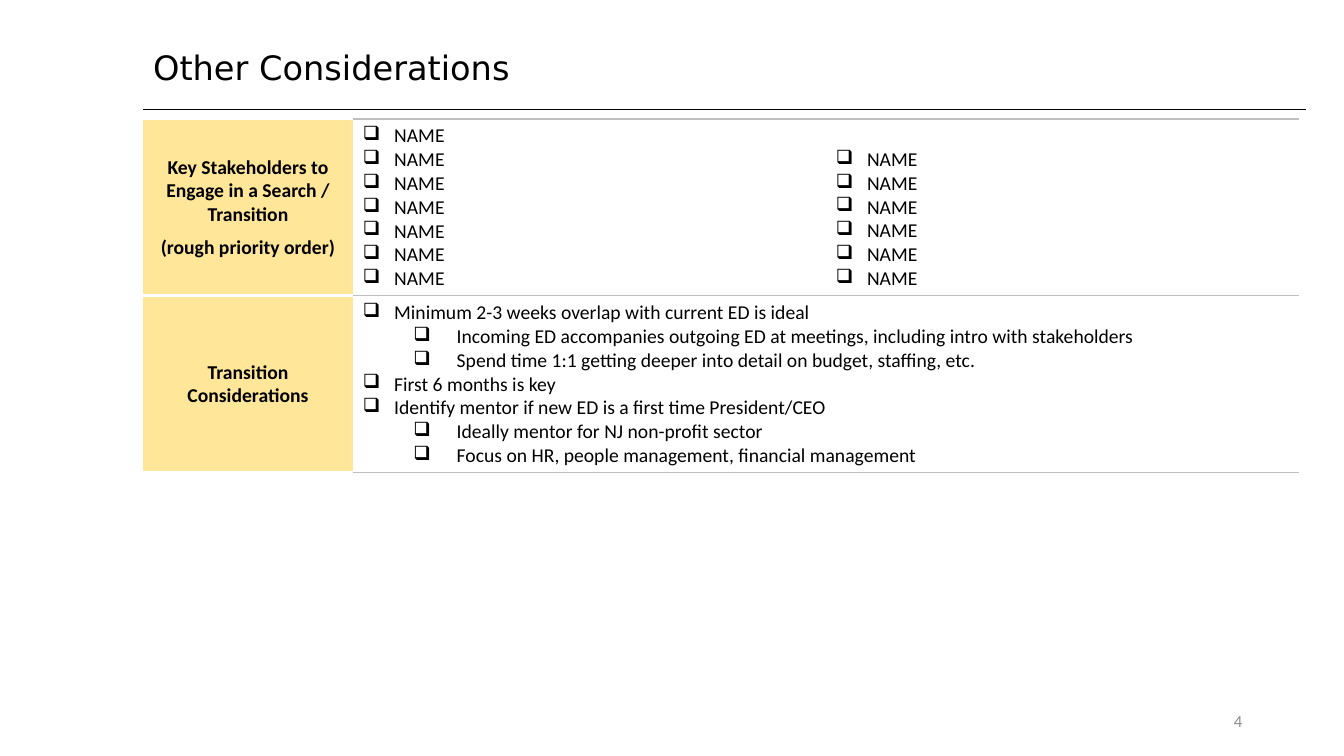
from lxml import etree
from pptx import Presentation
from pptx.dml.color import RGBColor
from pptx.enum import shapes, text
from pptx.oxml import ns
from pptx.util import Inches, Pt

HEX = {"ink": "000000", "gold": "FFE699", "rule": "BFBFBF",
       "gap": "FFFFFF", "page": "8C8C8C"}
PLAIN = "{2D5ABB26-0587-4C30-8999-92F81FD0307C}"
INDENT = [(0.31, -0.31), (0.93, -0.43)]
MID = text.MSO_ANCHOR.MIDDLE
LOW = text.MSO_ANCHOR.BOTTOM


def write(frame, lines, form, size=14, face="Calibri", ink="ink", bold=False):
    """Fill a text frame with one paragraph per line, formatted from form."""
    frame.word_wrap = True
    for i, line in enumerate(lines):
        para = frame.paragraphs[0] if i == 0 else frame.add_paragraph()
        for key, val in form.items():
            setattr(para, key, val)
        font = para.add_run().font
        para.runs[0].text = line
        for key, val in {"size": Pt(size), "name": face, "bold": bold}.items():
            setattr(font, key, val)
        font.color.rgb = RGBColor.from_string(HEX[ink])


def node(root, tag, **attrs):
    return etree.SubElement(root, ns.qn(tag), **attrs)


deck = Presentation()
deck.slide_width, deck.slide_height = Inches(13.33), Inches(7.5)
slide = deck.slides.add_slide(deck.slide_layouts[6])

# Title, rule and page number
rule = slide.shapes.add_connector(shapes.MSO_CONNECTOR.STRAIGHT, Inches(1.42),
                                  Inches(1.09), Inches(12.95), Inches(1.09))
rule.line.color.rgb = RGBColor.from_string(HEX["ink"])
rule.line.width = Pt(0.5)
node(rule._element.spPr, "a:effectLst")

boxes = [
    ((1.42, 0.16, 10.37, 0.81), "Other Considerations",
     {"line_spacing": 1.5, "space_before": Pt(12)},
     {"size": 24, "face": "DejaVu Sans"}),
    ((9.42, 6.95, 3, 0.4), "4", {"alignment": text.PP_ALIGN.RIGHT},
     {"size": 12, "ink": "page"}),
]
for spot, words, form, style in boxes:
    frame = slide.shapes.add_textbox(*map(Inches, spot)).text_frame
    frame.vertical_anchor = MID
    write(frame, [words], form, **style)

# Table
grid = slide.shapes.add_table(2, 3, Inches(1.42), Inches(1.18),
                              Inches(11.46), Inches(3.51)).table
grid._tbl.tblPr[0].text = PLAIN
grid.first_row = grid.horz_banding = False
for col, wide in zip(grid.columns, (2.08, 4.69, 4.69)):
    col.width = Inches(wide)
grid.cell(1, 1).merge(grid.cell(1, 2))

heads = [["Key Stakeholders to Engage in a Search / Transition",
          "(rough priority order)"], ["Transition Considerations"]]
center = {"alignment": text.PP_ALIGN.CENTER,
          "space_before": Pt(3), "space_after": Pt(3)}
for row, lines in enumerate(heads):
    write(grid.cell(row, 0).text_frame, lines, center, bold=True)

plans = [
    (0, "Minimum 2-3 weeks overlap with current ED is ideal"),
    (1, "Incoming ED accompanies outgoing ED at meetings, including intro with stakeholders"),
    (1, "Spend time 1:1 getting deeper into detail on budget, staffing, etc."),
    (0, "First 6 months is key"),
    (0, "Identify mentor if new ED is a first time President/CEO"),
    (1, "Ideally mentor for NJ non-profit sector"),
    (1, "Focus on HR, people management, financial management"),
]
lists = [(0, 1, [(0, "NAME")] * 7), (0, 2, [(0, "NAME")] * 6), (1, 1, plans)]
for row, col, items in lists:
    frame = grid.cell(row, col).text_frame
    write(frame, [words for _, words in items], {})
    for para, (level, _) in zip(frame.paragraphs, items):
        para.level = level
        left, hang = INDENT[level]
        props = para._p.get_or_add_pPr()
        props.set("marL", str(Inches(left)))
        props.set("indent", str(Inches(hang)))
        node(node(props, "a:buClr"), "a:srgbClr", val=HEX["ink"])
        node(props, "a:buChar", char="❑")

# Cell fills and borders
for row in range(2):
    grid.rows[row].height = Inches(1.755)
    for col in range(3):
        cell = grid.cell(row, col)
        cell.vertical_anchor = LOW if (row, col) == (0, 2) else MID
        edge, thick = ("rule", 1) if col else ("gap", 2.25)
        props = cell._tc.get_or_add_tcPr()
        for tag in ("a:lnT", "a:lnB"):
            line = node(props, tag, w=str(Pt(thick)))
            node(node(line, "a:solidFill"), "a:srgbClr", val=HEX[edge])
        if col:
            cell.fill.background()
        else:
            cell.fill.solid()
            cell.fill.fore_color.rgb = RGBColor.from_string(HEX["gold"])

deck.save("out.pptx")
